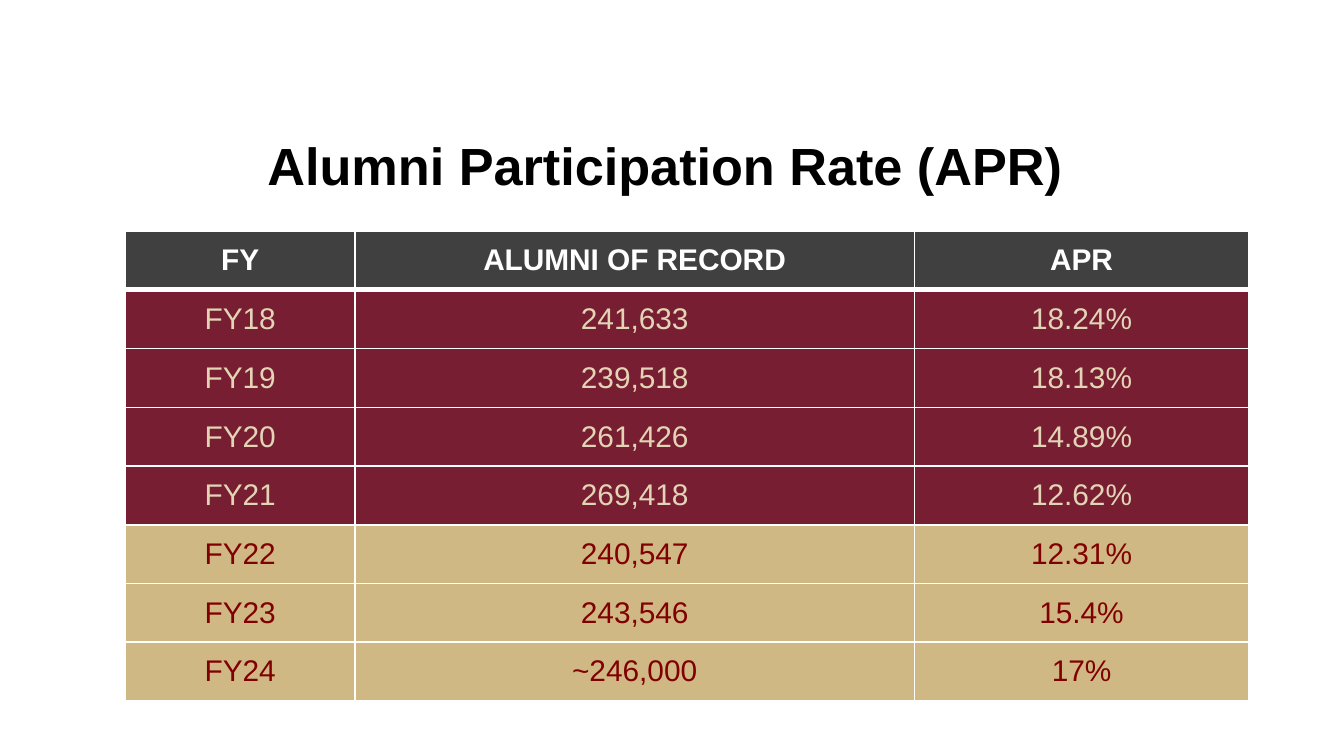
import pptx
import pptx.dml.color
import pptx.enum.text
import pptx.util
from lxml import etree

Cm = pptx.util.Cm
Pt = pptx.util.Pt
RGB = pptx.dml.color.RGBColor.from_string
CENTER = pptx.enum.text.PP_ALIGN.CENTER
MIDDLE = pptx.enum.text.MSO_ANCHOR.MIDDLE
DRAWING = "{http://schemas.openxmlformats.org/drawingml/2006/main}"

COLORS = {
    "black": "000000",
    "white": "FFFFFF",
    "charcoal": "404040",
    "garnet": "771E32",
    "gold": "D0B884",
    "pale_gold": "E3D4B5",
    "maroon": "800000",
}


def add_run(paragraph, text, size, color, bold):
    paragraph.alignment = CENTER
    run = paragraph.add_run()
    run.text = text
    run.font.name = "Arial"
    run.font.size = Pt(size)
    run.font.bold = bold
    run.font.color.rgb = RGB(COLORS[color])


def add_border(cell, side, width):
    line = etree.SubElement(cell._tc.get_or_add_tcPr(), DRAWING + side, w=str(Pt(width)))
    fill = etree.SubElement(line, DRAWING + "solidFill")
    etree.SubElement(fill, DRAWING + "srgbClr", val=COLORS["white"])


# Slide
deck = pptx.Presentation()
deck.slide_width = Cm(25.4)
deck.slide_height = Cm(14.29)
slide = deck.slides.add_slide(deck.slide_layouts[5])

# Title; its trailing space is part of the centred line
title = slide.shapes.title
title.left, title.top = Cm(1.27), Cm(2.24)
title.width, title.height = Cm(22.86), Cm(1.73)
title.text_frame.vertical_anchor = MIDDLE
add_run(title.text_frame.paragraphs[0], "Alumni Participation Rate (APR) ", 28, "black", True)

# Participation by fiscal year
rates = [
    ("FY", "ALUMNI OF RECORD", "APR"),
    ("FY18", "241,633", "18.24%"),
    ("FY19", "239,518", "18.13%"),
    ("FY20", "261,426", "14.89%"),
    ("FY21", "269,418", "12.62%"),
    ("FY22", "240,547", "12.31%"),
    ("FY23", "243,546", "15.4%"),
    ("FY24", "~246,000", "17%"),
]
row_styles = [("charcoal", "white")] + [("garnet", "pale_gold")] * 4 + [("gold", "maroon")] * 3
column_widths = [4.34, 10.57, 6.32]
row_height = 1.11

rate_table = slide.shapes.add_table(
    len(rates), len(column_widths), Cm(2.37), Cm(4.37),
    Cm(sum(column_widths)), Cm(row_height * len(rates))).table
for column, width in zip(rate_table.columns, column_widths):
    column.width = Cm(width)

for row_index, (year_rates, (fill_color, text_color)) in enumerate(zip(rates, row_styles)):
    rate_table.rows[row_index].height = Cm(row_height)
    for column_index, value in enumerate(year_rates):
        cell = rate_table.cell(row_index, column_index)
        cell.margin_left = cell.margin_right = cell.margin_top = cell.margin_bottom = 0
        cell.vertical_anchor = MIDDLE
        add_run(cell.text_frame.paragraphs[0], value, 16, text_color, row_index == 0)
        # The rule under the header is heavier than the rest
        add_border(cell, "lnL", 1)
        add_border(cell, "lnR", 1)
        add_border(cell, "lnT", 3 if row_index == 1 else 1)
        add_border(cell, "lnB", 3 if row_index == 0 else 1)
        cell.fill.solid()
        cell.fill.fore_color.rgb = RGB(COLORS[fill_color])

deck.save("out.pptx")
